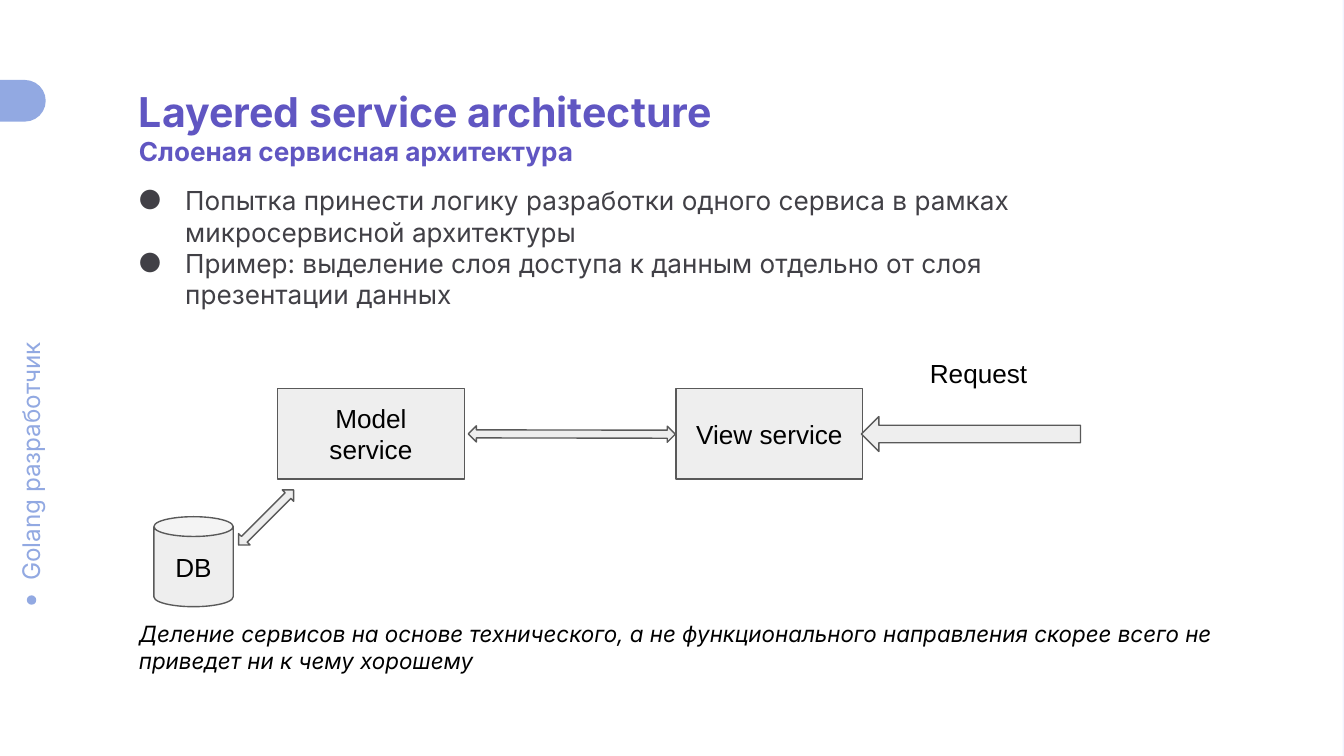
"""Build the slide on layered service architecture."""
from lxml import etree
from pptx import Presentation
from pptx.dml.color import RGBColor
from pptx.enum.shapes import MSO_SHAPE
from pptx.enum.text import MSO_ANCHOR, PP_ALIGN
from pptx.oxml.ns import qn
from pptx.util import Pt

PX = 4572
RECT, ROUND, OVAL = MSO_SHAPE.RECTANGLE, MSO_SHAPE.ROUNDED_RECTANGLE, MSO_SHAPE.OVAL
CAN, LEFT, BOTH = MSO_SHAPE.CAN, MSO_SHAPE.LEFT_ARROW, MSO_SHAPE.LEFT_RIGHT_ARROW
MIDDLE, CENTER = MSO_ANCHOR.MIDDLE, PP_ALIGN.CENTER
WHITE = RGBColor(0xFF, 0xFF, 0xFF)
BLACK = RGBColor(0, 0, 0)
PALE = RGBColor(0xF1, 0xF4, 0xFF)
BLUE = RGBColor(0x92, 0xA9, 0xE2)
VIOLET = RGBColor(0x60, 0x56, 0xC2)
DARK = RGBColor(0x41, 0x40, 0x46)
LIGHT = RGBColor(0xEE, 0xEE, 0xEE)
GRAY = RGBColor(0x59, 0x59, 0x59)

deck = Presentation()
deck.slide_width, deck.slide_height = 2000 * PX, 1125 * PX
slide = deck.slides.add_slide(deck.slide_layouts[6])
slide.background.fill.solid()
slide.background.fill.fore_color.rgb = PALE


def add_shape(kind, box, fill, line=None, turn=0):
    shape = slide.shapes.add_shape(kind, *(n * PX for n in box))
    shape.shadow.inherit = False
    shape.fill.solid()
    shape.fill.fore_color.rgb = fill
    if line is None:
        shape.line.fill.background()
    else:
        shape.line.color.rgb = line
        shape.line.width = Pt(0.75)
    shape.rotation = turn
    return shape


def add_text(text, box=None, shape=None, sizes=(14,), font="Inter", color=BLACK,
             bold=False, italic=False, pad=20, bullet=False, turn=0):
    centered = shape is not None
    if not centered:
        shape = slide.shapes.add_textbox(*(n * PX for n in box))
        shape.rotation = turn
    frame = shape.text_frame
    frame.word_wrap = True
    frame.margin_left = frame.margin_right = 20 * PX
    frame.margin_top = frame.margin_bottom = pad * PX
    if centered:
        frame.vertical_anchor = MIDDLE
    frame.text = text
    for i, para in enumerate(frame.paragraphs):
        size = sizes[i % len(sizes)]
        if centered:
            para.alignment = CENTER
        if bullet:
            props = para._p.get_or_add_pPr()
            props.set("marL", str(100 * PX))
            props.set("indent", str(-70 * PX))
            tint = etree.SubElement(props, qn("a:buClr"))
            etree.SubElement(tint, qn("a:srgbClr")).set("val", str(color))
            etree.SubElement(props, qn("a:buSzPts")).set("val", str(size * 100))
            etree.SubElement(props, qn("a:buFont")).set("typeface", font)
            etree.SubElement(props, qn("a:buChar")).set("char", "●")
        for run in para.runs:
            run.font.name = font
            run.font.size = Pt(size)
            run.font.bold = bold
            run.font.italic = italic
            run.font.color.rgb = color


add_shape(RECT, (-2, 0, 2000, 1125), WHITE)
add_text("Golang разработчик", (-154, 642, 400, 84), sizes=(13,), color=BLUE, turn=270)
add_shape(OVAL, (40, 886, 14, 14), BLUE)
add_shape(ROUND, (-76, 119, 144, 62), BLUE).adjustments[0] = 0.5

add_text("Layered service architecture\nСлоеная сервисная архитектура",
         (187, 119, 1224, 94), sizes=(22, 14), color=VIOLET, bold=True, pad=10)
add_text("Попытка принести логику разработки одного сервиса в рамках "
         "микросервисной архитектуры\n"
         "Пример: выделение слоя доступа к данным отдельно от слоя презентации данных",
         (156, 265, 1578, 285), color=DARK, pad=10, bullet=True)
add_text("Деление сервисов на основе технического, а не функционального "
         "направления скорее всего не приведет ни к чему хорошему",
         (187, 903, 1688, 122), sizes=(12,), italic=True)

for name, kind, box in (
    ("Model service", RECT, (413, 578, 278, 135)),
    ("View service", RECT, (1006, 578, 278, 135)),
    ("DB", CAN, (229, 769, 118, 134)),
):
    add_text(name, shape=add_shape(kind, box, LIGHT, GRAY), font="Arial")

for kind, box, turn in (
    (BOTH, (697, 634, 308, 24), 0.1),
    (LEFT, (1282, 620, 326, 52), 0),
    (BOTH, (338, 758, 116, 24), 135),
):
    add_shape(kind, box, LIGHT, GRAY, turn)
add_text("Request", (1364, 512, 206, 114), font="Arial")

deck.save("out.pptx")
